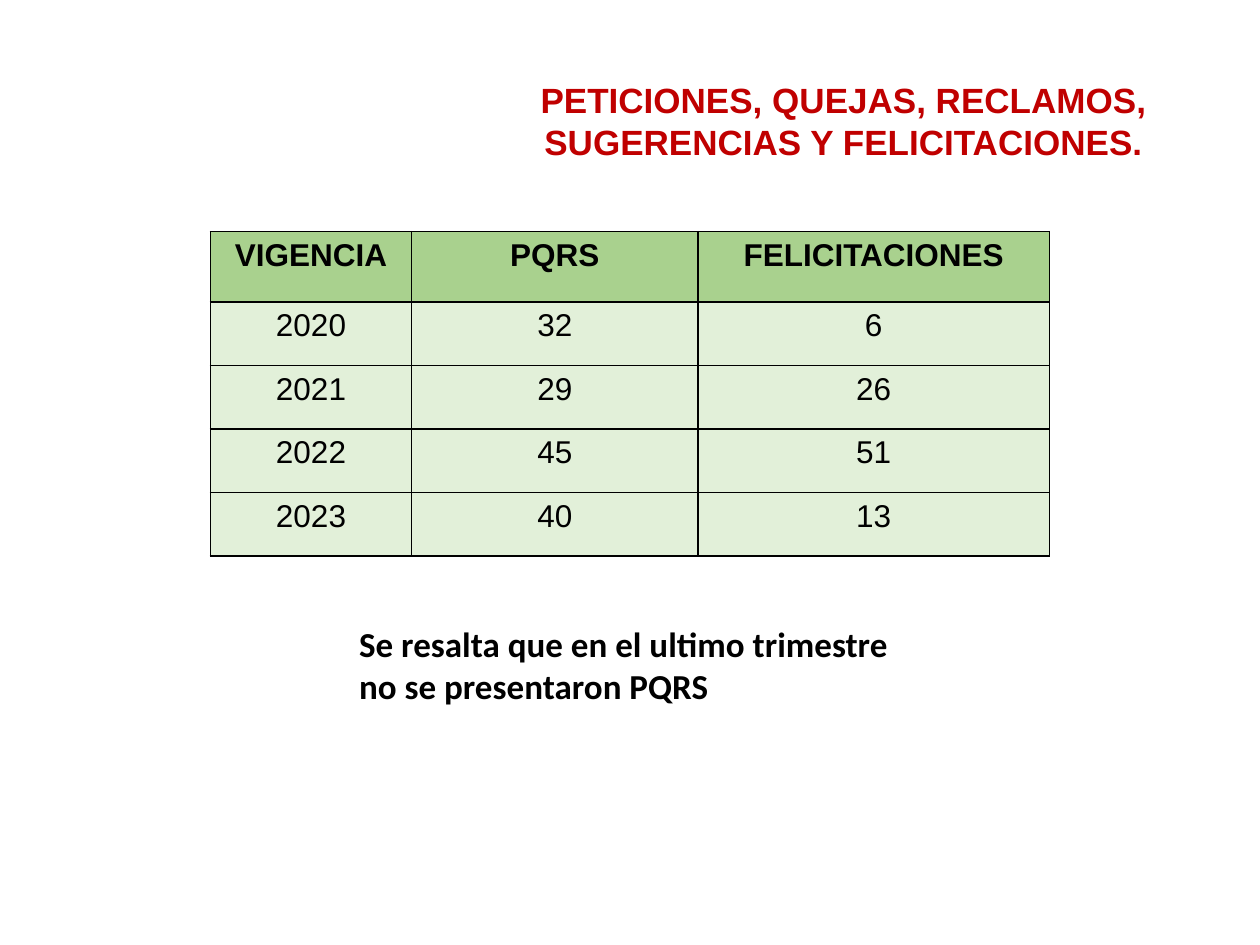
from dataclasses import dataclass

from lxml.etree import SubElement
from pptx import Presentation
from pptx.dml.color import RGBColor
from pptx.enum.shapes import MSO_SHAPE
from pptx.enum.text import MSO_ANCHOR, MSO_AUTO_SIZE, PP_ALIGN
from pptx.oxml.ns import qn
from pptx.util import Cm, Pt


@dataclass(frozen=True)
class Theme:
    white: str = "FFFFFF"
    black: str = "000000"
    red: str = "C00000"
    head: str = "A9D18E"
    body: str = "E2F0D9"
    sans: str = "Arial"
    plain: str = "Calibri"
    large: int = 20
    small: int = 18
    rule: int = 1


@dataclass(frozen=True)
class Style:
    face: str
    size: int
    color: str
    bold: bool = True
    align: PP_ALIGN = PP_ALIGN.CENTER


@dataclass(frozen=True)
class Box:
    left: float
    top: float
    width: float
    height: float

    def place(self) -> tuple:
        return Cm(self.left), Cm(self.top), Cm(self.width), Cm(self.height)


THEME = Theme()
TITLE = Style(THEME.sans, THEME.large, THEME.red)
HEAD = Style(THEME.sans, THEME.small, THEME.black)
BODY = Style(THEME.sans, THEME.small, THEME.black, bold=False)
NOTE = Style(THEME.plain, THEME.large, THEME.black, align=PP_ALIGN.LEFT)

COLS = (4.06, 5.77, 7.09)
HEAD_ROW, BODY_ROW = 1.42, 1.28
ROWS = (
    ("VIGENCIA", "PQRS", "FELICITACIONES"),
    ("2020", "32", "6"),
    ("2021", "29", "26"),
    ("2022", "45", "51"),
    ("2023", "40", "13"),
)


def paint(fill, color: str) -> None:
    fill.solid()
    fill.fore_color.rgb = RGBColor.from_string(color)


def write(frame, lines: tuple, style: Style) -> None:
    for i, line in enumerate(lines):
        para = frame.add_paragraph() if i else frame.paragraphs[0]
        para.alignment = style.align
        run = para.add_run()
        run.text = line
        run.font.name = style.face
        run.font.size = Pt(style.size)
        run.font.bold = style.bold
        run.font.color.rgb = RGBColor.from_string(style.color)


def border(cell) -> None:
    props = cell._tc.get_or_add_tcPr()
    for side in ("lnL", "lnR", "lnT", "lnB"):
        line = SubElement(props, qn(f"a:{side}"), w=str(Pt(THEME.rule)))
        fill = SubElement(line, qn("a:solidFill"))
        SubElement(fill, qn("a:srgbClr"), val=THEME.black)


def add_title(slide, box: Box, text: str) -> None:
    shape = slide.shapes.add_shape(MSO_SHAPE.RECTANGLE, *box.place())
    shape.shadow.inherit = False
    paint(shape.fill, THEME.white)
    shape.line.fill.background()
    frame = shape.text_frame
    frame.word_wrap = True
    frame.auto_size = MSO_AUTO_SIZE.SHAPE_TO_FIT_TEXT
    frame.vertical_anchor = MSO_ANCHOR.MIDDLE
    write(frame, (text,), TITLE)


def add_grid(slide, left: float, top: float) -> None:
    highs = (HEAD_ROW,) + (BODY_ROW,) * (len(ROWS) - 1)
    box = Box(left, top, sum(COLS), sum(highs))
    table = slide.shapes.add_table(len(ROWS), len(COLS), *box.place()).table
    for col, width in zip(table.columns, COLS):
        col.width = Cm(width)
    for r, (row, high) in enumerate(zip(table.rows, highs)):
        row.height = Cm(high)
        for cell, text in zip(row.cells, ROWS[r]):
            border(cell)
            paint(cell.fill, THEME.body if r else THEME.head)
            write(cell.text_frame, (text,), BODY if r else HEAD)


def add_note(slide, box: Box, lines: tuple) -> None:
    frame = slide.shapes.add_textbox(*box.place()).text_frame
    frame.word_wrap = False
    frame.auto_size = MSO_AUTO_SIZE.SHAPE_TO_FIT_TEXT
    write(frame, lines, NOTE)


def main() -> None:
    deck = Presentation()
    deck.slide_width, deck.slide_height = Cm(25.4), Cm(19.05)
    slide = deck.slides.add_slide(deck.slide_layouts[6])
    add_title(slide, Box(10.31, 1.45, 13.39, 1.96),
              "PETICIONES, QUEJAS, RECLAMOS, SUGERENCIAS Y FELICITACIONES.")
    add_grid(slide, 4.24, 4.67)
    add_note(slide, Box(6.99, 12.42, 11.43, 1.96),
             ("Se resalta que en el ultimo trimestre", "no se presentaron PQRS"))
    deck.save("out.pptx")


if __name__ == "__main__":
    main()
